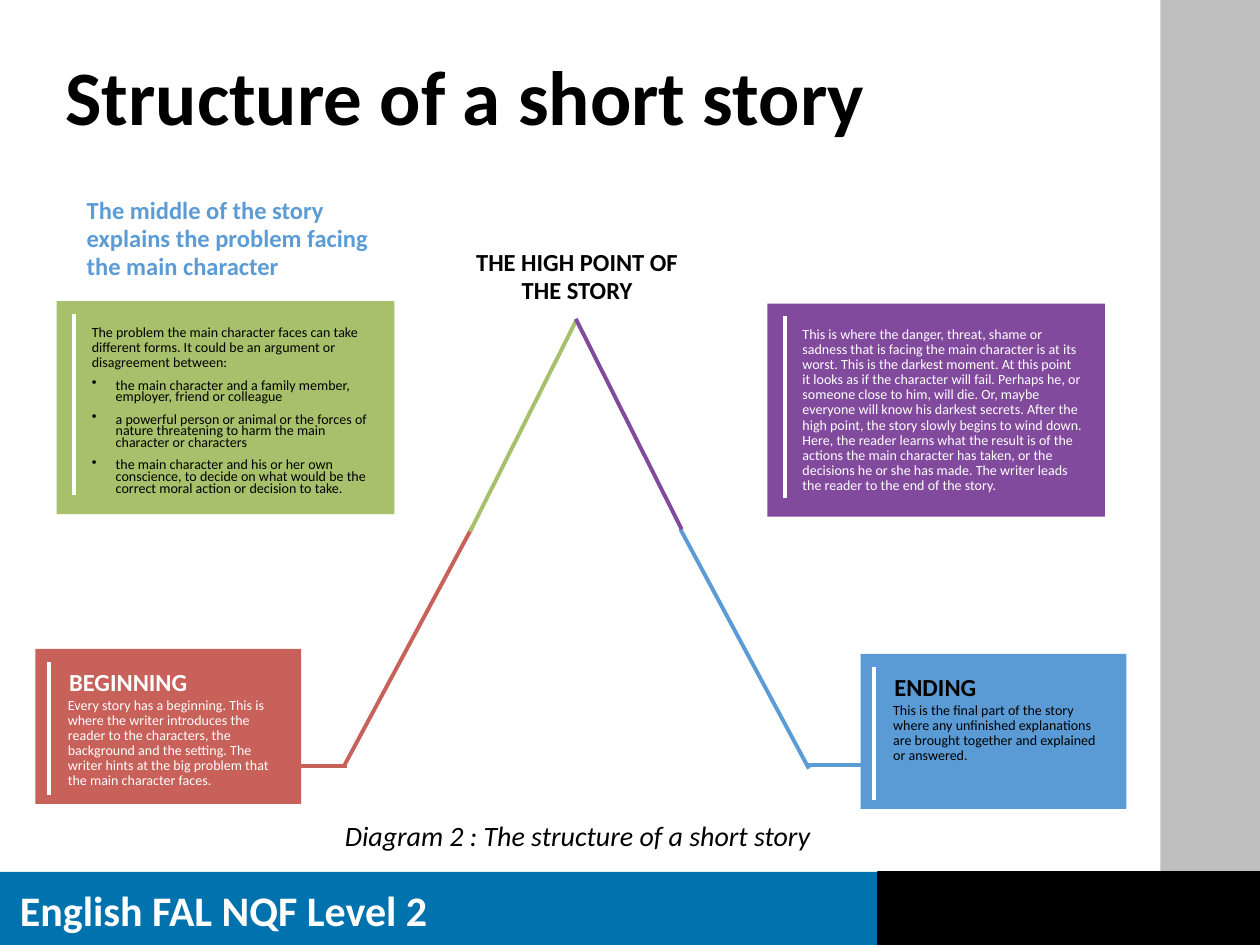
from lxml import etree
from pptx import Presentation
from pptx.dml.color import RGBColor
from pptx.enum.shapes import MSO_CONNECTOR, MSO_SHAPE
from pptx.enum.text import MSO_ANCHOR, PP_ALIGN
from pptx.oxml.ns import qn
from pptx.util import Inches, Pt

RECTANGLE = MSO_SHAPE.RECTANGLE
STRAIGHT = MSO_CONNECTOR.STRAIGHT
TOP, MIDDLE = MSO_ANCHOR.TOP, MSO_ANCHOR.MIDDLE
LEFT, CENTER = PP_ALIGN.LEFT, PP_ALIGN.CENTER

COLUMNS, ROWS = 100, 75
WIDTH, HEIGHT = Inches(10), Inches(7.5)
BLACK, WHITE, GREY, NAVY = "000000", "FFFFFF", "BFBFBF", "0072AE"
GREEN, PURPLE, RED, BLUE, SKY = "A7C06B", "824A9D", "C7615A", "5A9BD5", "5B9CD6"


def color(value):
    return RGBColor.from_string(value)


def write(paragraph, text, size=8, ink=BLACK, bold=False, italic=False,
          align=LEFT, spacing=0.9, before=0, bullet=False):
    if bullet:
        properties = paragraph._p.get_or_add_pPr()
        properties.set("marL", str(Inches(0.19)))
        properties.set("indent", str(-Inches(0.19)))
        etree.SubElement(properties, qn("a:buChar"), char="•")
    paragraph.alignment = align
    paragraph.line_spacing = spacing
    paragraph.space_before = Pt(before)
    run = paragraph.add_run()
    run.text = text
    run.font.name = "Calibri"
    run.font.size = Pt(size)
    run.font.bold = bold
    run.font.italic = italic
    run.font.color.rgb = color(ink)


class StorySlide:
    heading_style = {"size": 14, "bold": True, "spacing": 0.6}
    bullet_style = {"bullet": True, "spacing": 0.7, "before": 6}
    line_width = 2.25

    def __init__(self, presentation):
        self.slide = presentation.slides.add_slide(presentation.slide_layouts[5])

    def place(self, *cells):
        units = (WIDTH / COLUMNS, HEIGHT / ROWS) * 2
        return [round(cell * unit) for cell, unit in zip(cells, units)]

    def title(self, area, text):
        shape = self.slide.shapes.title
        shape.left, shape.top, shape.width, shape.height = self.place(*area)
        shape.text_frame.vertical_anchor = MIDDLE
        write(shape.text_frame.paragraphs[0], text, size=44, bold=True)

    def block(self, area, fill, outline=None):
        shape = self.slide.shapes.add_shape(RECTANGLE, *self.place(*area))
        shape.shadow.inherit = False
        shape.fill.solid()
        shape.fill.fore_color.rgb = color(fill)
        if outline:
            shape.line.color.rgb = color(outline)
            shape.line.width = Pt(1)
        else:
            shape.line.fill.background()

    def line(self, start, end, ink):
        connector = self.slide.shapes.add_connector(
            STRAIGHT, *self.place(*start, *end))
        connector.line.color.rgb = color(ink)
        connector.line.width = Pt(self.line_width)
        etree.SubElement(connector._element.spPr, qn("a:effectLst"))

    def text(self, area, text, bullets=(), **style):
        frame = self.slide.shapes.add_textbox(*self.place(*area)).text_frame
        frame.word_wrap = True
        frame.vertical_anchor = TOP
        write(frame.paragraphs[0], text, **style)
        for bullet in bullets:
            write(frame.add_paragraph(), bullet, **{**style, **self.bullet_style})

    def heading(self, area, lines, **style):
        frame = self.slide.shapes.add_textbox(*self.place(*area)).text_frame
        frame.word_wrap = True
        for index, text in enumerate(lines):
            paragraph = frame.add_paragraph() if index else frame.paragraphs[0]
            write(paragraph, text, before=6 if index else 0,
                  **self.heading_style, **style)

    def large_card(self, left, top, fill, ink, text, bullets=()):
        self.block((left, top, 26.8, 16.9), fill)
        self.line((left + 1.4, top + 1), (left + 1.4, top + 15.4), WHITE)
        self.text((left + 1.8, top + 1.4, 24.2, 14.1), text, bullets, ink=ink)

    def small_card(self, left, top, fill, ink, heading, text):
        self.block((left, top, 21.1, 12.3), fill)
        self.line((left + 1.1, top + 1), (left + 1.1, top + 11.6), WHITE)
        self.text((left + 1.6, top + 3.4, 18.2, 7.9), text, ink=ink)
        self.heading((left + 1.7, top + 1.8, 14.5, 1.7), [heading], ink=ink)


def main():
    presentation = Presentation()
    presentation.slide_width, presentation.slide_height = WIDTH, HEIGHT
    story = StorySlide(presentation)

    story.block((92.1, 0, 7.9, 74.9), GREY)
    story.block((0, 69.2, 100, 5.8), NAVY)
    story.block((69.7, 69.2, 30.3, 5.8), BLACK, outline=BLACK)
    story.text((0.6, 69.7, 37.5, 5), "English FAL NQF Level 2",
               size=24, ink=WHITE, bold=True, spacing=1)

    story.title((4.2, 4, 86.5, 7.9), "Structure of a short story")
    story.text((2.6, 64.8, 86.5, 2.7), "Diagram 2 : The structure of a short story",
               size=16, italic=True, align=CENTER)
    story.heading((5.9, 15.8, 25, 6.4),
                  ["The middle of the story", "explains the problem facing",
                   "the main character"], ink=SKY)

    for start, end, ink in [
        ((12.7, 60.8), (27.5, 60.8), RED),
        ((27.3, 60.8), (37.5, 41.8), RED),
        ((37.3, 42.2), (45.7, 25.5), GREEN),
        ((78.8, 60.7), (64, 60.7), SKY),
        ((64.2, 61), (54, 42), SKY),
        ((54.1, 42), (45.7, 25.3), PURPLE),
    ]:
        story.line(start, end, ink)

    story.heading((35.4, 19.9, 20.8, 3.1), ["THE HIGH POINT OF", "THE STORY"],
                  align=CENTER)

    story.small_card(
        68.3, 51.9, BLUE, BLACK, "ENDING",
        "This is the final part of the story where any unfinished explanations "
        "are brought together and explained or answered.")
    story.large_card(
        60.9, 24.1, PURPLE, WHITE,
        "This is where the danger, threat, shame or sadness that is facing the main "
        "character is at its worst. This is the darkest moment. At this point it looks "
        "as if the character will fail. Perhaps he, or someone close to him, will die. "
        "Or, maybe everyone will know his darkest secrets. After the high point, the "
        "story slowly begins to wind down. Here, the reader learns what the result is "
        "of the actions the main character has taken, or the decisions he or she has "
        "made. The writer leads the reader to the end of the story.")
    story.large_card(
        4.5, 23.9, GREEN, BLACK,
        "The problem the main character faces can take different forms. It could be "
        "an argument or disagreement between:",
        ["the main character and a family member, employer, friend or colleague",
         "a powerful person or animal or the forces of nature threatening to harm "
         "the main character or characters",
         "the main character and his or her own conscience, to decide on what would "
         "be the correct moral action or decision to take."])
    story.small_card(
        2.8, 51.5, RED, WHITE, "BEGINNING",
        "Every story has a beginning. This is where the writer introduces the reader "
        "to the characters, the background and the setting. The writer hints at the "
        "big problem that the main character faces.")

    presentation.save("out.pptx")


if __name__ == "__main__":
    main()
